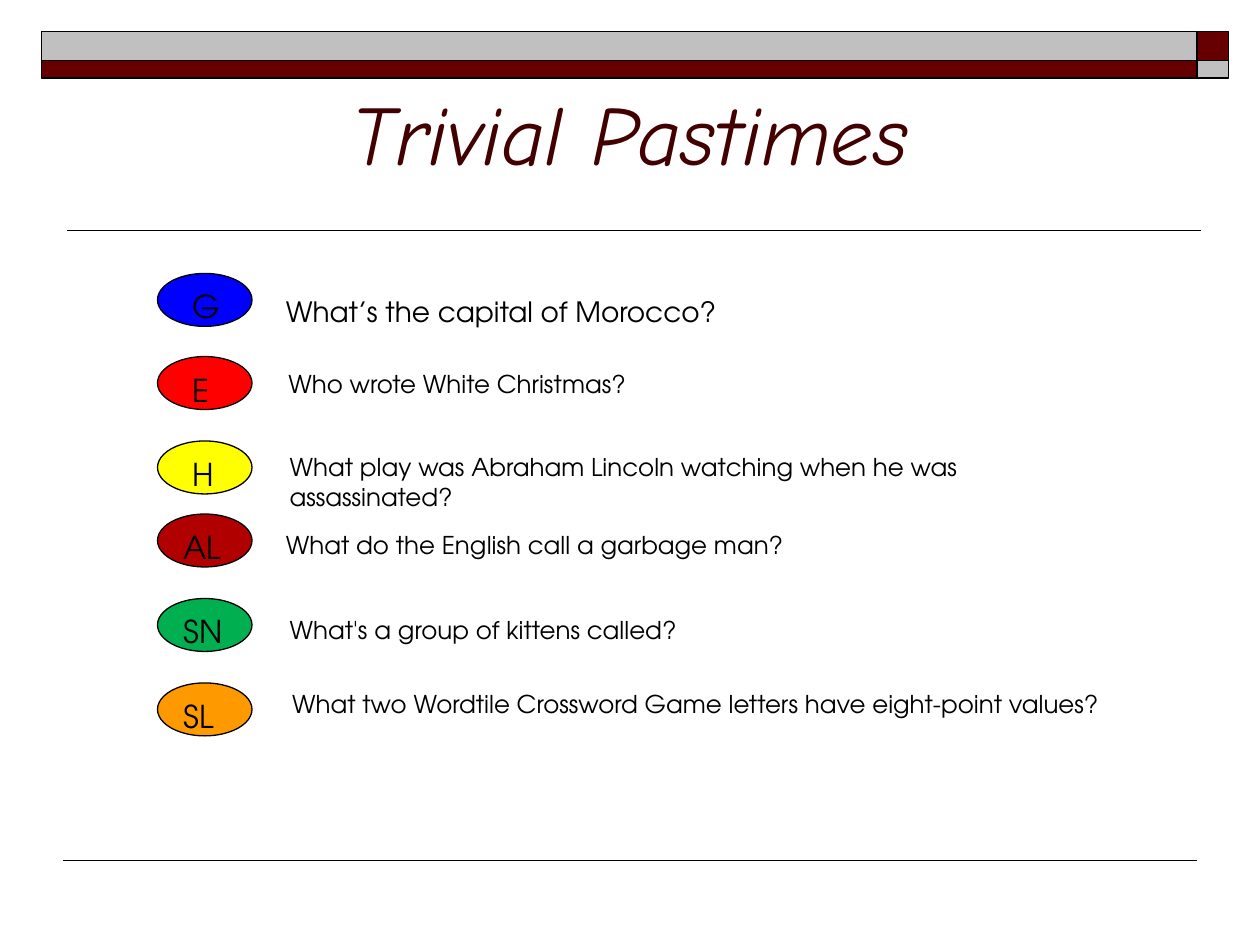
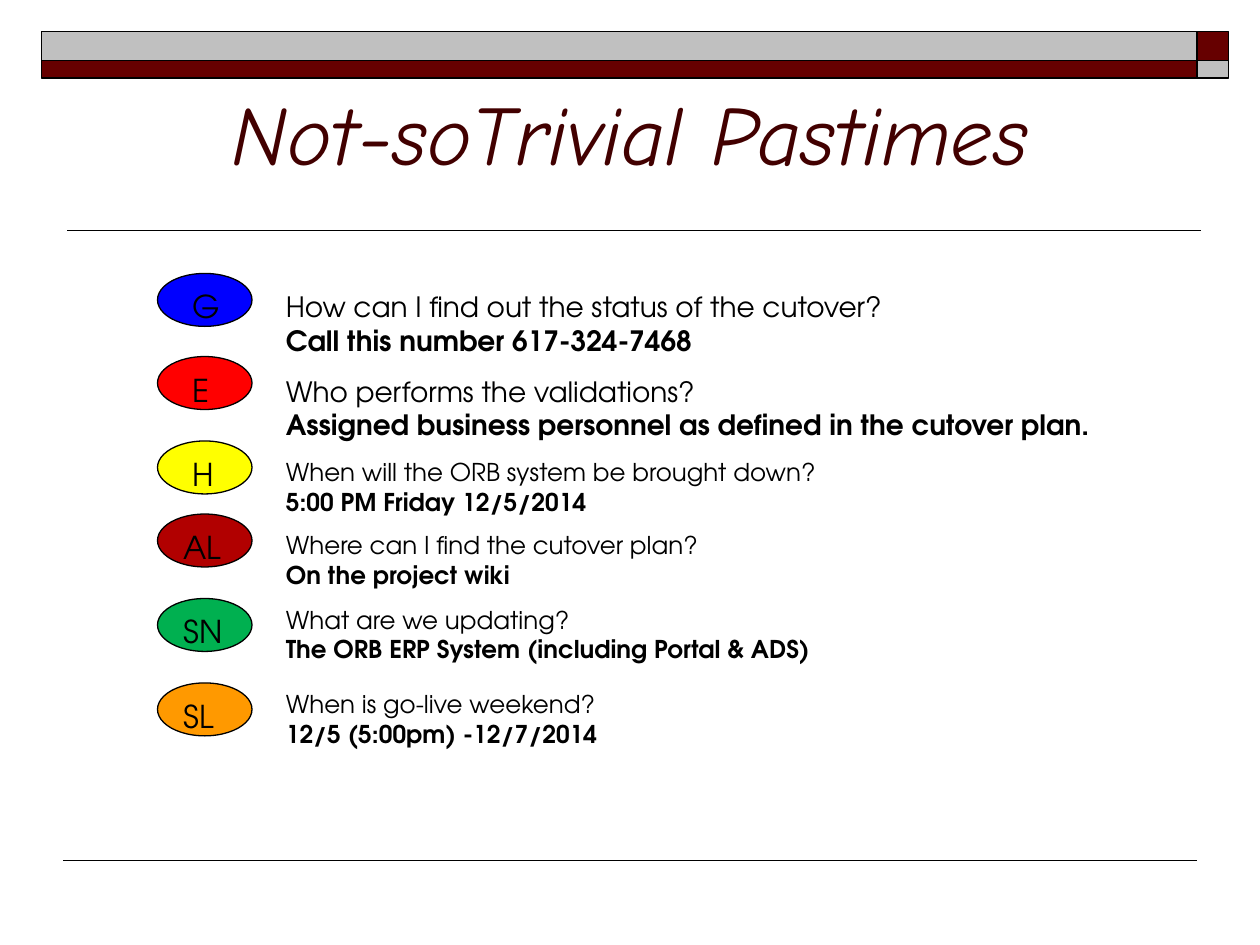
from pptx import Presentation
from pptx.dml.color import RGBColor
from pptx.enum.shapes import MSO_CONNECTOR, MSO_SHAPE
from pptx.enum.text import MSO_ANCHOR, MSO_AUTO_SIZE, PP_ALIGN
from pptx.oxml.ns import qn
from pptx.util import Inches, Pt
from lxml import etree

RECTANGLE, OVAL = MSO_SHAPE.RECTANGLE, MSO_SHAPE.OVAL
STRAIGHT = MSO_CONNECTOR.STRAIGHT
TOP, BOTTOM = MSO_ANCHOR.TOP, MSO_ANCHOR.BOTTOM
LEFT, CENTER = PP_ALIGN.LEFT, PP_ALIGN.CENTER
FIXED, GROW = MSO_AUTO_SIZE.NONE, MSO_AUTO_SIZE.SHAPE_TO_FIT_TEXT

BLACK = RGBColor(0x00, 0x00, 0x00)
MAROON = RGBColor(0x66, 0x00, 0x00)
SILVER = RGBColor(0xC0, 0xC0, 0xC0)
TITLE_BROWN = RGBColor(0x42, 0x00, 0x00)
BLUE = RGBColor(0x00, 0x00, 0xFF)
RED = RGBColor(0xFF, 0x00, 0x00)
YELLOW = RGBColor(0xFF, 0xFF, 0x00)
DARK_RED = RGBColor(0xB1, 0x00, 0x00)
GREEN = RGBColor(0x00, 0xB0, 0x50)
ORANGE = RGBColor(0xFF, 0x99, 0x00)

TITLE_FONT = "Comic Neue"
BODY_FONT = "TeX Gyre Adventor"
TITLE_ONLY = 5

CATEGORIES = [
    ("G", BLUE, 2.17),
    ("E", RED, 2.83),
    ("H", YELLOW, 3.5),
    ("AL", DARK_RED, 4.08),
    ("SN", GREEN, 4.75),
    ("SL", ORANGE, 5.42),
]

TRIVIAL = [
    (2.17, 2.29, 6.17, 16, ["What’s the capital of Morocco?"]),
    (2.19, 2.88, 7.22, 14, ["Who wrote White Christmas?"]),
    (2.2, 3.54, 6.05, 14,
     ["What play was Abraham Lincoln watching when he was assassinated?"]),
    (2.17, 4.16, 7.08, 14, ["What do the English call a garbage man?"]),
    (2.2, 4.83, 6.5, 14, ["What's a group of kittens called?"]),
    (2.22, 5.42, 7.17, 14,
     ["What two Wordtile Crossword Game letters have eight-point values?"]),
]

NOT_SO_TRIVIAL = [
    (2.17, 2.25, 6.17, 16, ["How can I find out the status of the cutover?",
                            "Call this number 617-324-7468"]),
    (2.17, 2.92, 7.33, 16, ["Who performs the validations?",
                            "Assigned business personnel as defined in the cutover plan."]),
    (2.17, 3.58, 5.17, 14, ["When will the ORB system be brought down?",
                            "5:00 PM Friday 12/5/2014"]),
    (2.17, 4.16, 7.08, 14, ["Where can I find the cutover plan?",
                            "On the project wiki"]),
    (2.17, 4.75, 6.5, 14, ["What are we updating?",
                           "The ORB ERP System (including Portal & ADS)"]),
    (2.17, 5.42, 7.17, 14, ["When is go-live weekend?",
                            "12/5 (5:00pm) -12/7/2014"]),
]


class QuizDeck:
    """Holds the quiz style and the slide being built."""

    def __init__(self):
        """Start an empty 10 by 7.5 inch presentation."""
        self.presentation = Presentation()
        self.presentation.slide_width = Inches(10)
        self.presentation.slide_height = Inches(7.5)
        self.slide = None

    def new_slide(self, heading):
        """Add a slide with its bands, rules and title."""
        layout = self.presentation.slide_layouts[TITLE_ONLY]
        self.slide = self.presentation.slides.add_slide(layout)
        for top, height, bar, corner in [(0.25, 0.23, SILVER, MAROON),
                                         (0.48, 0.14, MAROON, SILVER)]:
            self.outlined(RECTANGLE, 0.33, top, 9.17, height, bar, 1)
            self.outlined(RECTANGLE, 9.5, top, 0.25, height, corner, 1)
        self.rule(9.53, 0.53, 1.83, 1)
        self.rule(0.5, 9.5, 6.83, 0.75)
        self.title(heading)

    def title(self, heading):
        """Fill and format the title placeholder."""
        title = self.slide.shapes.title
        title.left, title.top = Inches(0.5), Inches(0.25)
        title.width, title.height = Inches(9), Inches(1.25)
        frame = title.text_frame
        frame.text = heading
        frame.auto_size = FIXED
        frame.vertical_anchor = BOTTOM
        frame.paragraphs[0].alignment = CENTER
        font = self.style(frame.paragraphs[0], TITLE_FONT, 48, TITLE_BROWN)
        font.italic = True

    def style(self, paragraph, name, size, color):
        """Format the only run of a paragraph and return its font."""
        font = paragraph.runs[0].font
        font.name, font.size = name, Pt(size)
        font.color.rgb = color
        return font

    def outlined(self, kind, left, top, width, height, fill, weight):
        """Draw a filled shape with a black outline."""
        shape = self.slide.shapes.add_shape(
            kind, Inches(left), Inches(top), Inches(width), Inches(height))
        shape.shadow.inherit = False
        shape.fill.solid()
        shape.fill.fore_color.rgb = fill
        shape.line.color.rgb = BLACK
        shape.line.width = Pt(weight)
        return shape

    def rule(self, start, end, y, weight):
        """Draw a horizontal black line."""
        line = self.slide.shapes.add_connector(
            STRAIGHT, Inches(start), Inches(y), Inches(end), Inches(y))
        line.line.color.rgb = BLACK
        line.line.width = Pt(weight)
        etree.SubElement(line._element.spPr, qn("a:effectLst"))

    def token(self, letters, color, top):
        """Draw the coloured oval of a quiz category."""
        oval = self.outlined(OVAL, 1.25, top, 0.75, 0.42, color, 0.75)
        frame = oval.text_frame
        frame.text = letters
        frame.vertical_anchor = TOP
        frame.margin_left = Inches(0.17 if len(letters) == 1 else 0.1)
        frame.margin_right = Inches(0.05)
        frame.paragraphs[0].alignment = LEFT
        self.style(frame.paragraphs[0], BODY_FONT, 18, BLACK)

    def question(self, left, top, width, size, lines):
        """Write a question, followed by its answer in bold if there is one."""
        height = 0.1 + len(lines) * size / 60
        box = self.slide.shapes.add_textbox(
            Inches(left), Inches(top), Inches(width), Inches(height))
        frame = box.text_frame
        frame.word_wrap = True
        frame.auto_size = GROW
        frame.text = "\n".join(lines)
        for index, paragraph in enumerate(frame.paragraphs):
            font = self.style(paragraph, BODY_FONT, size, BLACK)
            font.bold = index > 0

    def quiz(self, heading, questions):
        """Build a whole quiz slide."""
        self.new_slide(heading)
        for category, question in zip(CATEGORIES, questions):
            self.token(*category)
            self.question(*question)


def main():
    """Build and save both quiz slides."""
    deck = QuizDeck()
    deck.quiz("Trivial Pastimes", TRIVIAL)
    deck.quiz("Not-soTrivial Pastimes", NOT_SO_TRIVIAL)
    deck.presentation.save("out.pptx")


if __name__ == "__main__":
    main()
